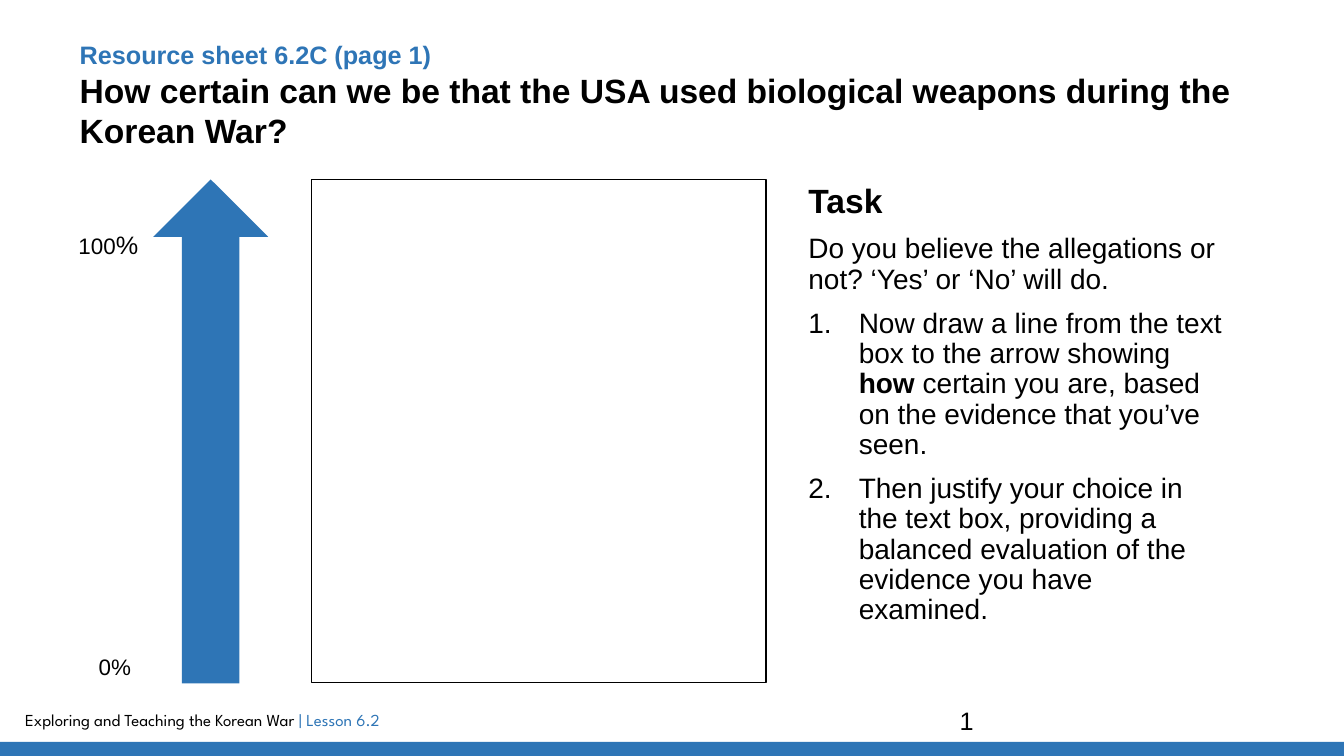
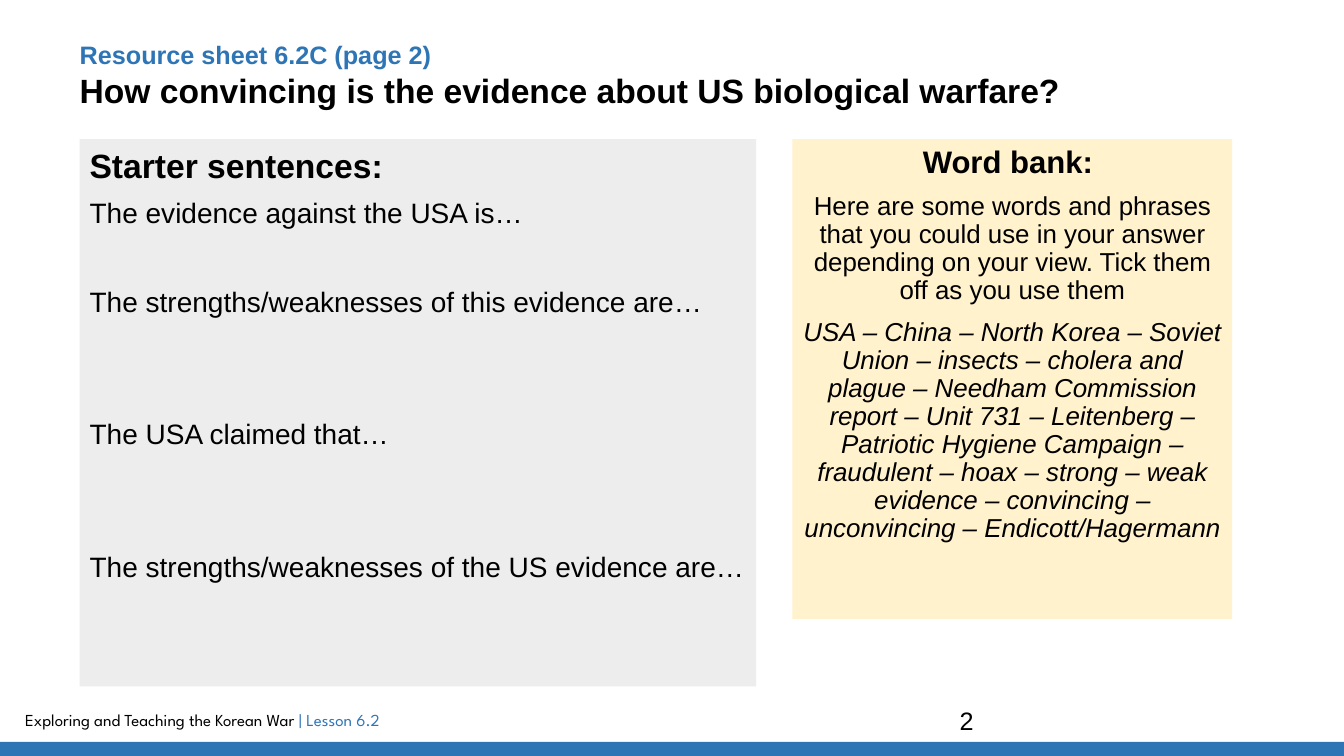
"""Build two lesson sheets on the evidence of the Korean War."""
from typing import Any, NamedTuple, Optional

from lxml.etree import SubElement
from pptx import Presentation
from pptx.dml.color import RGBColor as Rgb
from pptx.enum.shapes import MSO_SHAPE as Form
from pptx.enum.text import MSO_ANCHOR as Anchor, PP_ALIGN as Align
from pptx.oxml.ns import qn
from pptx.util import Emu, Inches, Pt

WIDE, HIGH = Inches(13.33), Inches(7.5)
BLUE, BLACK, WHITE = "2E75B6", "000000", "FFFFFF"
GREY, CREAM = "EDEDED", "FFF2CC"
SANS, BRAND = "Arial", "League Spartan"
LEFT, TOP, HEAD = 5.93, 23.73, 18.4


class Run(NamedTuple):
    text: str
    size: float = 20
    bold: bool = False
    slant: bool = False
    ink: str = BLACK
    face: str = SANS
    field: bool = False


class Para(NamedTuple):
    runs: list[Run]
    gap: float = 10
    line: float = 0.9
    count: bool = False
    side: Align = Align.LEFT


class Area(NamedTuple):
    x: float
    y: float
    wide: float
    high: float


class Pane(NamedTuple):
    area: Area
    paras: list[Para] = []
    fill: Optional[str] = None
    edge: Optional[str] = None
    form: Form = Form.RECTANGLE
    inset: tuple[float, float] = (0.1, 0.05)


def tint(code: str) -> Rgb:
    return Rgb.from_string(code)


def apply(item: Any, style: dict[str, Any]) -> None:
    for name, value in style.items():
        setattr(item, name, value)


def add_field(para: Any, run: Run) -> None:
    field = SubElement(para._p, qn("a:fld"), type="slidenum",
                       id="{B6F15528-21DE-4FAA-801E-634DDDAF4B2B}")
    props = SubElement(field, qn("a:rPr"), lang="en-GB", sz=str(run.size * 100))
    paint = SubElement(props, qn("a:solidFill"))
    SubElement(paint, qn("a:srgbClr"), val=run.ink)
    SubElement(props, qn("a:latin"), typeface=run.face)
    SubElement(field, qn("a:t")).text = run.text


def add_run(para: Any, run: Run) -> None:
    if run.field:
        add_field(para, run)
        return
    part = para.add_run()
    part.text = run.text
    apply(part.font, {"name": run.face, "size": Pt(run.size),
                      "bold": run.bold, "italic": run.slant})
    part.font.color.rgb = tint(run.ink)


def write(frame: Any, pane: Pane) -> None:
    side, top = map(Inches, pane.inset)
    apply(frame, {"word_wrap": True, "vertical_anchor": Anchor.TOP,
                  "margin_left": side, "margin_right": side,
                  "margin_top": top, "margin_bottom": top})
    for index, item in enumerate(pane.paras):
        para = frame.add_paragraph() if index else frame.paragraphs[0]
        if item.count:
            props = para._p.get_or_add_pPr()
            props.set("marL", str(Inches(0.5)))
            props.set("indent", str(-Inches(0.5)))
            SubElement(props, qn("a:buAutoNum"), type="arabicPeriod")
        apply(para, {"alignment": item.side, "line_spacing": item.line,
                     "space_before": Pt(item.gap if index else 0)})
        for run in item.runs:
            add_run(para, run)


def draw(slide: Any, pane: Pane) -> None:
    x, y, wide, high = pane.area
    place = [Emu(round(share * full / 100)) for share, full in
             ((x, WIDE), (y, HIGH), (wide, WIDE), (high, HIGH))]
    if pane.fill:
        shape = slide.shapes.add_shape(pane.form, *place)
        shape.shadow.inherit = False
        shape.fill.solid()
        shape.fill.fore_color.rgb = tint(pane.fill)
        if pane.edge:
            shape.line.color.rgb = tint(pane.edge)
            shape.line.width = Pt(1)
        else:
            shape.line.fill.background()
    else:
        shape = slide.shapes.add_textbox(*place)
    if pane.paras:
        write(shape.text_frame, pane)


def label(area: Area, *runs: Run) -> Pane:
    return Pane(area, [Para(list(runs), line=1.0)])


def frame_sheet(page: int, title: str, high: float) -> list[Pane]:
    top = Run(f"Resource sheet 6.2C (page {page})", 18, True, ink=BLUE)
    return [
        label(Area(1.13, 93.2, 58.66, 4),
              Run("Exploring and Teaching the Korean War ", 12, face=BRAND),
              Run("| Lesson 6.2", 12, ink=BLUE, face=BRAND)),
        Pane(Area(0, 98.13, 100, 1.87), fill=BLUE),
        label(Area(70.67, 92.67, 22.5, 5.33), Run(str(page), 18, field=True)),
        Pane(Area(LEFT, 5.2, 89.27, high),
             [Para([run], 0, 1.0) for run in (top, Run(title, 24, True))],
             inset=(0, 0)),
    ]


def scale_sheet() -> list[Pane]:
    task = [
        Para([Run("Task", 24, True)]),
        Para([Run("Do you believe the allegations or not? ‘Yes’ or ‘No’ will do.")]),
        Para([Run("Now draw a line from the text box to the arrow showing "),
              Run("how", bold=True),
              Run(" certain you are, based on the evidence that you’ve seen.")],
             count=True),
        Para([Run("Then justify your choice in the text box, providing a balanced "
                  "evaluation of the evidence you have examined.")], count=True),
    ]
    return [
        Pane(Area(59.41, TOP, 32.33, 67.6), task),
        Pane(Area(11.4, TOP, 8.55, 66.67), fill=BLUE, form=Form.UP_ARROW),
        label(Area(6.6, 85.73, 4.43, 4.93), Run("0%", 16)),
        label(Area(5.1, 29.73, 7.35, 5.33), Run("100", 16), Run("%", 18)),
        Pane(Area(23.18, TOP, 33.83, 66.53), fill=WHITE, edge=BLACK),
    ]


def word_sheet() -> list[Pane]:
    bank = [
        Para([Run("Word bank: ", 22.2, True)], line=0.8, side=Align.CENTER),
        Para([Run("Here are some words and phrases that you could use in your answer "
                  "depending on your view. Tick them off as you use them", 18.5)],
             side=Align.CENTER),
        Para([Run("USA – China – North Korea – Soviet Union – insects – cholera and "
                  "plague – Needham Commission report – Unit 731 – Leitenberg – "
                  "Patriotic Hygiene Campaign – fraudulent – hoax – strong – weak "
                  "evidence – convincing – unconvincing – Endicott/Hagermann",
                  18.5, slant=True)], side=Align.CENTER),
    ]
    starts = [
        Para([Run("Starter sentences:", 24, True)]),
        Para([Run("The evidence against the USA is…")]),
        Para([Run("The strengths/weaknesses of this evidence are…")], 41.6),
        Para([Run("The USA claimed that…")], 73.2),
        Para([Run("The strengths/weaknesses of the US evidence are…")], 73.2),
    ]
    return [
        Pane(Area(58.96, HEAD, 32.71, 63.47), bank, CREAM, inset=(0.1, 0.1)),
        Pane(Area(LEFT, HEAD, 50.34, 72.4), starts, GREY, inset=(0.1, 0.1)),
    ]


def main() -> None:
    deck = Presentation()
    apply(deck, {"slide_width": WIDE, "slide_height": HIGH})
    sheets = [
        ("How certain can we be that the USA used biological weapons during the "
         "Korean War?", 14.8, scale_sheet()),
        ("How convincing is the evidence about US biological warfare?", 9.47,
         word_sheet()),
    ]
    for page, (title, high, body) in enumerate(sheets, 1):
        slide = deck.slides.add_slide(deck.slide_layouts[6])
        for pane in frame_sheet(page, title, high) + body:
            draw(slide, pane)
    deck.save("out.pptx")


if __name__ == "__main__":
    main()
